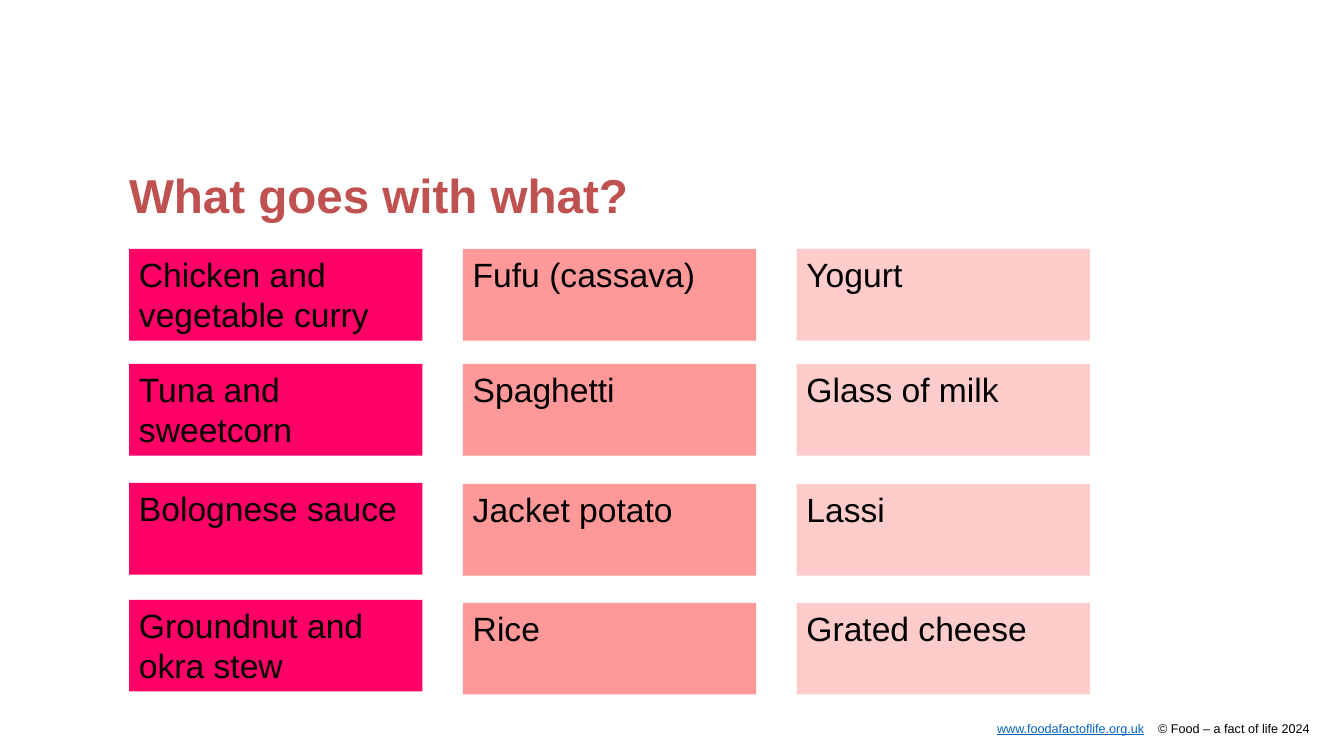
from dataclasses import dataclass

from pptx import Presentation
from pptx.dml.color import RGBColor
from pptx.enum.shapes import MSO_SHAPE
from pptx.enum.text import MSO_ANCHOR, PP_ALIGN
from pptx.util import Inches, Pt

RECTANGLE = MSO_SHAPE.RECTANGLE
TOP = MSO_ANCHOR.TOP
LEFT, RIGHT = PP_ALIGN.LEFT, PP_ALIGN.RIGHT


@dataclass(frozen=True)
class Theme:
    font: str = "Arial"
    title_color: str = "BF5150"
    text_color: str = "000000"
    link_color: str = "0563C1"
    title_size: int = 34
    card_size: int = 24
    footer_size: int = 9


THEME = Theme()
CARD_WIDTH, CARD_HEIGHT = 2.91, 0.91
COLUMN_STEP = 3.31
SIDE_TOPS = (0, 1.14, 2.33, 3.51)
MAIN_TOPS = (0, 1.14, 2.32, 3.48)

# Fill, card tops within the board, dishes
COLUMNS = (
    ("FF0066", MAIN_TOPS, ("Chicken and vegetable curry", "Tuna and sweetcorn",
                           "Bolognese sauce", "Groundnut and okra stew")),
    ("FF9999", SIDE_TOPS, ("Fufu (cassava)", "Spaghetti", "Jacket potato", "Rice")),
    ("FFCCCC", SIDE_TOPS, ("Yogurt", "Glass of milk", "Lassi", "Grated cheese")),
)


def add_run(paragraph, text, size, color, **formats):
    run = paragraph.add_run()
    run.text = text
    values = {"name": THEME.font, "size": Pt(size), **formats}
    for attribute, value in values.items():
        setattr(run.font, attribute, value)
    run.font.color.rgb = RGBColor.from_string(color)
    return run


def add_plain_box(slide, left, top, width, height):
    """Add a wrapping text box without margins and return its first paragraph."""
    box = slide.shapes.add_textbox(*map(Inches, (left, top, width, height)))
    frame_format = {"word_wrap": True, "vertical_anchor": TOP, "margin_left": 0,
                    "margin_top": 0, "margin_right": 0, "margin_bottom": 0}
    for attribute, value in frame_format.items():
        setattr(box.text_frame, attribute, value)
    return box.text_frame.paragraphs[0]


def add_title(slide, left, top, width, height):
    heading = add_plain_box(slide, left, top, width, height)
    heading.line_spacing = 0.9
    add_run(heading, "What goes with what?", THEME.title_size,
            THEME.title_color, bold=True)


def add_footer(slide, left, top, width, height):
    credit = add_plain_box(slide, left, top, width, height)
    credit.alignment = RIGHT
    add_run(credit, "www.foodafactoflife.org.uk", THEME.footer_size,
            THEME.link_color, underline=True)
    gap = add_run(credit, " ", THEME.footer_size, THEME.text_color)
    gap.font._element.set("spc", "750")  # widens the gap, in hundredths of a point
    add_run(credit, "© Food – a fact of life 2024", THEME.footer_size,
            THEME.text_color)


def add_card(slide, left, top, dish, fill):
    card = slide.shapes.add_shape(
        RECTANGLE, *map(Inches, (left, top, CARD_WIDTH, CARD_HEIGHT)))
    card.shadow.inherit = False
    card.fill.solid()
    card.fill.fore_color.rgb = RGBColor.from_string(fill)
    card.line.fill.background()
    card.text_frame.word_wrap = True
    card.text_frame.vertical_anchor = TOP
    label = card.text_frame.paragraphs[0]
    label.alignment = LEFT
    add_run(label, dish, THEME.card_size, THEME.text_color)


def add_board(slide, left, top):
    """Add the columns of dishes to be matched."""
    for column, (fill, card_tops, dishes) in enumerate(COLUMNS):
        for card_top, dish in zip(card_tops, dishes):
            add_card(slide, left + column * COLUMN_STEP, top + card_top, dish, fill)


def main():
    presentation = Presentation()
    presentation.slide_width = Inches(13.33)
    presentation.slide_height = Inches(7.5)
    slide = presentation.slides.add_slide(presentation.slide_layouts[6])
    add_footer(slide, 1.26, 7.15, 11.73, 0.15)
    add_title(slide, 1.28, 1.71, 10.63, 0.79)
    add_board(slide, 1.28, 2.47)
    presentation.save("out.pptx")


if __name__ == "__main__":
    main()
